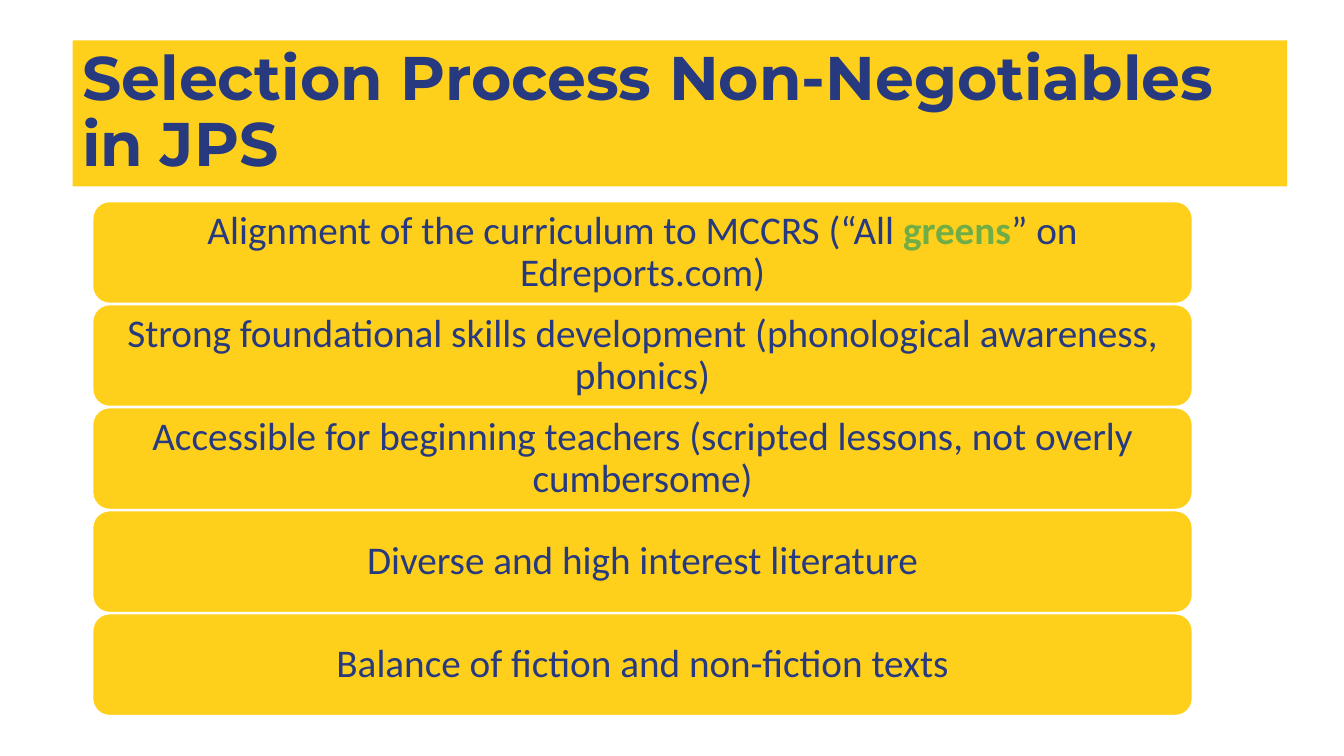
from dataclasses import dataclass

from pptx import Presentation
from pptx.dml.color import RGBColor
from pptx.enum.shapes import MSO_SHAPE
from pptx.enum.text import MSO_ANCHOR, PP_ALIGN
from pptx.shapes.autoshape import Shape
from pptx.slide import Slide
from pptx.util import Pt

RECTANGLE = MSO_SHAPE.RECTANGLE
ROUNDED = MSO_SHAPE.ROUNDED_RECTANGLE
MIDDLE = MSO_ANCHOR.MIDDLE
LEFT, CENTER = PP_ALIGN.LEFT, PP_ALIGN.CENTER

YELLOW = RGBColor(0xFF, 0xD0, 0x1B)
NAVY = RGBColor(0x27, 0x3A, 0x7F)
GREEN = RGBColor(0x70, 0xAD, 0x47)
WHITE = RGBColor(0xFF, 0xFF, 0xFF)

BAR_LEFT, BAR_TOP = 66.2, 144
BAR_WIDTH, BAR_HEIGHT = 785.5, 72.7
BAR_PITCH = 73.6
BAR_MARGIN = 8.4


@dataclass(frozen=True)
class Criterion:
    before: str
    highlight: str = ""
    after: str = ""


CRITERIA = [
    Criterion("Alignment of the curriculum to MCCRS (“All ", "greens", "” on Edreports.com)"),
    Criterion("Strong foundational skills development (phonological awareness, phonics)"),
    Criterion("Accessible for beginning teachers (scripted lessons, not overly cumbersome)"),
    Criterion("Diverse and high interest literature"),
    Criterion("Balance of fiction and non-fiction texts"),
]


def add_panel(slide: Slide, kind: MSO_SHAPE, left: float, top: float,
              width: float, height: float, text: str, alignment: PP_ALIGN,
              font_name: str, size: float) -> Shape:
    """Add a yellow panel with navy, vertically centred text."""
    shape = slide.shapes.add_shape(kind, Pt(left), Pt(top), Pt(width), Pt(height))
    shape.shadow.inherit = False
    shape.fill.solid()
    shape.fill.fore_color.rgb = YELLOW
    shape.line.fill.background()
    text_frame = shape.text_frame
    text_frame.word_wrap = True
    text_frame.vertical_anchor = MIDDLE
    text_frame.text = text
    paragraph = text_frame.paragraphs[0]
    paragraph.alignment = alignment
    paragraph.line_spacing = 0.9
    paragraph.font.name = font_name
    paragraph.font.size = Pt(size)
    paragraph.font.color.rgb = NAVY
    for run in paragraph.runs:
        format_run(shape, run.text, font_name, size, NAVY, False, existing=True)
    return shape


def format_run(shape: Shape, text: str, font_name: str, size: float,
               color: RGBColor, bold: bool, existing: bool = False) -> None:
    """Format the first run, or append a run and format it."""
    paragraph = shape.text_frame.paragraphs[0]
    run = paragraph.runs[0] if existing else paragraph.add_run()
    run.text = text
    run.font.name = font_name
    run.font.size = Pt(size)
    run.font.color.rgb = color
    run.font.bold = bold


def add_criterion(slide: Slide, index: int, criterion: Criterion) -> None:
    """Add one rounded bar of the stacked list."""
    bar = add_panel(slide, ROUNDED, BAR_LEFT, BAR_TOP + index * BAR_PITCH,
                    BAR_WIDTH, BAR_HEIGHT, criterion.before, CENTER, "Calibri", 28)
    bar.line.color.rgb = WHITE
    bar.line.width = Pt(1)
    text_frame = bar.text_frame
    text_frame.margin_left = text_frame.margin_right = Pt(BAR_MARGIN)
    text_frame.margin_top = text_frame.margin_bottom = Pt(BAR_MARGIN)
    if criterion.highlight:
        format_run(bar, criterion.highlight, "Calibri", 28, GREEN, True)
        format_run(bar, criterion.after, "Calibri", 28, NAVY, False)


def main() -> None:
    presentation = Presentation()
    presentation.slide_width, presentation.slide_height = Pt(960), Pt(540)
    slide = presentation.slides.add_slide(presentation.slide_layouts[6])

    # Title banner
    title = add_panel(slide, RECTANGLE, 51.8, 28.8, 867.6, 104.4,
                      "Selection Process Non-Negotiables in JPS", LEFT, "Montserrat", 44)
    title.text_frame.paragraphs[0].runs[0].font.bold = True

    # Stacked criteria
    for index, criterion in enumerate(CRITERIA):
        add_criterion(slide, index, criterion)

    presentation.save("out.pptx")


if __name__ == "__main__":
    main()
